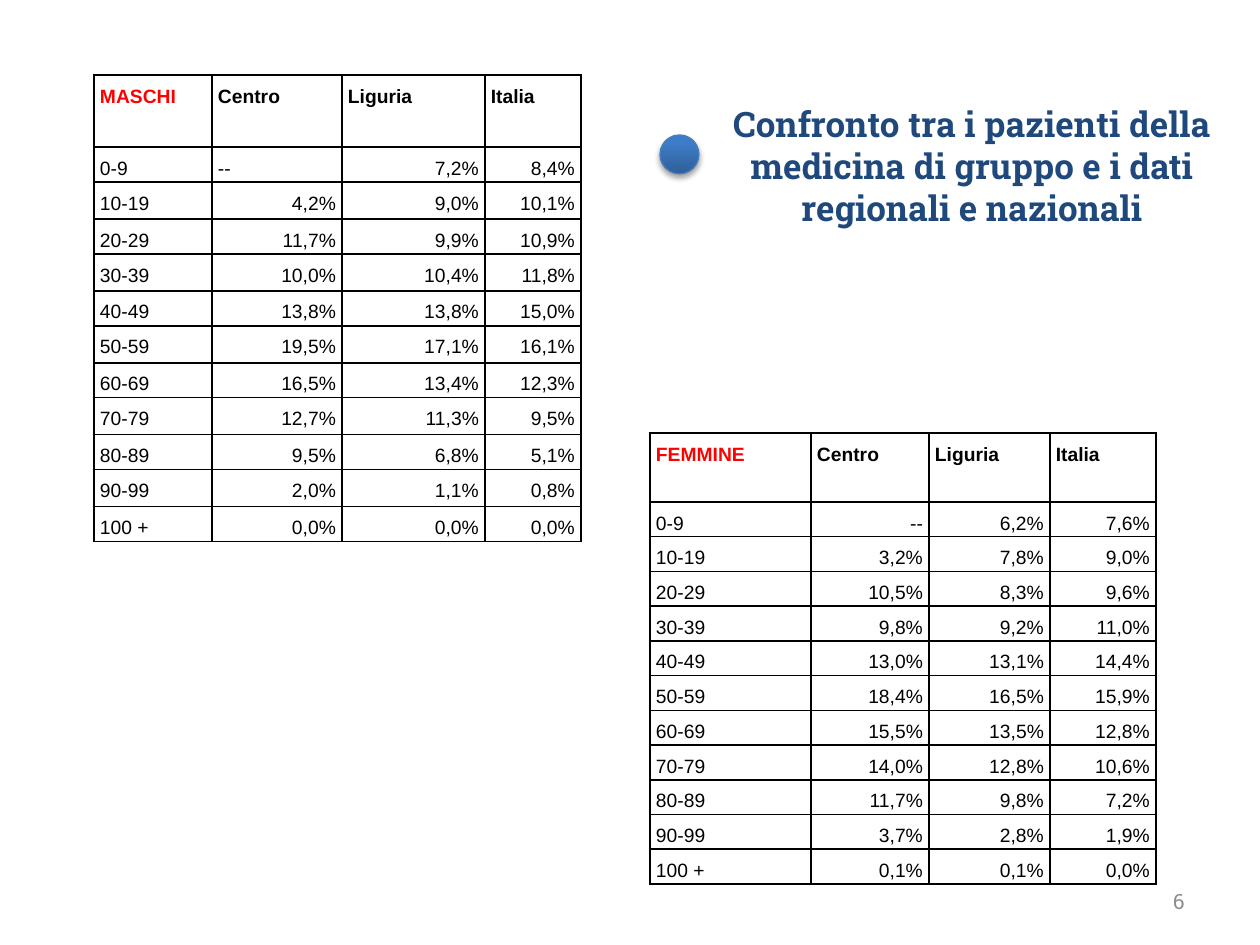
from copy import deepcopy
from itertools import cycle, islice

from lxml.etree import SubElement
from pptx import Presentation
from pptx.dml.color import RGBColor
from pptx.enum.shapes import MSO_SHAPE as Shape
from pptx.enum.text import MSO_ANCHOR as Anchor, PP_ALIGN as Align
from pptx.oxml.ns import qn
from pptx.util import Pt

EMU_PER_PX = 914400 / 126
COLORS = {
    "accent": "FF0000", "text": "000000", "title": "1F497D", "number": "8C8C8C",
    "ball_dark": "2F5F99", "ball_mid": "3D7CC7", "ball_light": "3A7CCB",
    "ball_line": "4B7EBC",
}
AGES = ["0-9", "10-19", "20-29", "30-39", "40-49", "50-59",
        "60-69", "70-79", "80-89", "90-99", "100 +"]
REGIONS = ["Centro", "Liguria", "Italia"]
MALES = [
    "-- 7,2% 8,4%", "4,2% 9,0% 10,1%", "11,7% 9,9% 10,9%", "10,0% 10,4% 11,8%",
    "13,8% 13,8% 15,0%", "19,5% 17,1% 16,1%", "16,5% 13,4% 12,3%",
    "12,7% 11,3% 9,5%", "9,5% 6,8% 5,1%", "2,0% 1,1% 0,8%", "0,0% 0,0% 0,0%",
]
FEMALES = [
    "-- 6,2% 7,6%", "3,2% 7,8% 9,0%", "10,5% 8,3% 9,6%", "9,8% 9,2% 11,0%",
    "13,0% 13,1% 14,4%", "18,4% 16,5% 15,9%", "15,5% 13,5% 12,8%",
    "14,0% 12,8% 10,6%", "11,7% 9,8% 7,2%", "3,7% 2,8% 1,9%", "0,1% 0,1% 0,0%",
]


def px(length):
    return round(length * EMU_PER_PX)


def rgb(name):
    return RGBColor.from_string(COLORS[name])


def write(frame, text, color, align=Align.LEFT, **font_values):
    para = frame.paragraphs[0]
    para.alignment = align
    span = para.add_run()
    span.text = text
    for name, value in font_values.items():
        setattr(span.font, name, value)
    span.font.color.rgb = rgb(color)
    return para


def add_text(page, place, text, color, align, anchor, **font_values):
    box = page.shapes.add_textbox(*map(px, place))
    box.text_frame.word_wrap = True
    box.text_frame.vertical_anchor = anchor
    write(box.text_frame, text, color, align, name="Roboto Slab", **font_values)


def add_borders(cell):
    properties = cell._tc.get_or_add_tcPr()
    for side in ("lnL", "lnR", "lnT", "lnB"):
        line = SubElement(properties, qn(f"a:{side}"), w=str(Pt(1)))
        fill = SubElement(line, qn("a:solidFill"))
        SubElement(fill, qn("a:srgbClr"), val=COLORS["text"])


def fill_cell(cell, text, color, align, bold):
    margins = {"margin_left": 6, "margin_right": 6, "margin_top": 0, "margin_bottom": 0}
    for name, value in margins.items():
        setattr(cell, name, px(value))
    add_borders(cell)
    cell.fill.background()
    para = write(cell.text_frame, text, color, align,
                 name="Arial", size=Pt(11), bold=bold)
    para.line_spacing = 1.5


def add_age_table(page, left, top, widths, heights, heading, shares, dash_align):
    rows = [[heading, *REGIONS]]
    rows += [[age, *share.split()] for age, share in zip(AGES, shares)]
    frame = page.shapes.add_table(len(rows), len(widths), px(left), px(top),
                                  px(sum(widths)), px(sum(heights)))
    table = frame.table
    table.first_row = table.horz_banding = False
    for column, width in zip(table.columns, widths):
        column.width = px(width)
    for row, height in zip(table.rows, heights):
        row.height = px(height)
    for r, texts in enumerate(rows):
        for c, text in enumerate(texts):
            if r == 0 or c == 0:
                align = Align.LEFT
            else:
                align = dash_align if text == "--" else Align.RIGHT
            color = "accent" if r == c == 0 else "text"
            fill_cell(table.cell(r, c), text, color, align, bold=r == 0)


def add_gradient(shape, stops, angle):
    shape.fill.gradient()
    shape.fill.gradient_angle = angle
    stop_list = shape._element.spPr.find(qn("a:gradFill")).find(qn("a:gsLst"))
    stop_list.append(deepcopy(stop_list[-1]))
    for stop, (position, color) in zip(shape.fill.gradient_stops, stops):
        stop.position = position
        stop.color.rgb = rgb(color)


def add_soft_shadow(shape):
    shape.shadow.inherit = False
    effects = shape._element.spPr.find(qn("a:effectLst"))
    shadow = SubElement(effects, qn("a:outerShdw"), blurRad=str(Pt(3.1)),
                        dist=str(Pt(1.8)), dir="5400000", rotWithShape="0")
    color = SubElement(shadow, qn("a:srgbClr"), val=COLORS["text"])
    SubElement(color, qn("a:alpha"), val="35000")


def add_ball(page, left, top, size):
    ball = page.shapes.add_shape(Shape.OVAL, *map(px, (left, top, size, size)))
    add_gradient(ball, [(0, "ball_dark"), (0.8, "ball_mid"), (1, "ball_light")], 90)
    ball.line.color.rgb = rgb("ball_line")
    ball.line.width = Pt(0.75)
    add_soft_shadow(ball)


def main():
    deck = Presentation()
    deck.slide_width, deck.slide_height = px(1260), px(945)
    page = deck.slides.add_slide(deck.slide_layouts[6])
    add_text(page, (903, 876, 294, 50), "6", "number",
             Align.RIGHT, Anchor.MIDDLE, size=Pt(12))
    add_age_table(page, 94, 75, [118, 130, 143, 96],
                  [72, *islice(cycle([35, 37]), len(AGES))],
                  "MASCHI", MALES, Align.JUSTIFY)
    add_age_table(page, 650, 433, [161, 118, 121, 106], [69] + [34] * len(AGES),
                  "FEMMINE", FEMALES, Align.RIGHT)
    add_text(page, (719, 96, 506, 140),
             "Confronto tra i pazienti della medicina di gruppo "
             "e i dati regionali e nazionali",
             "title", Align.CENTER, Anchor.TOP, size=Pt(20), bold=True)
    add_ball(page, 660, 135, 39)
    deck.save("out.pptx")


if __name__ == "__main__":
    main()
